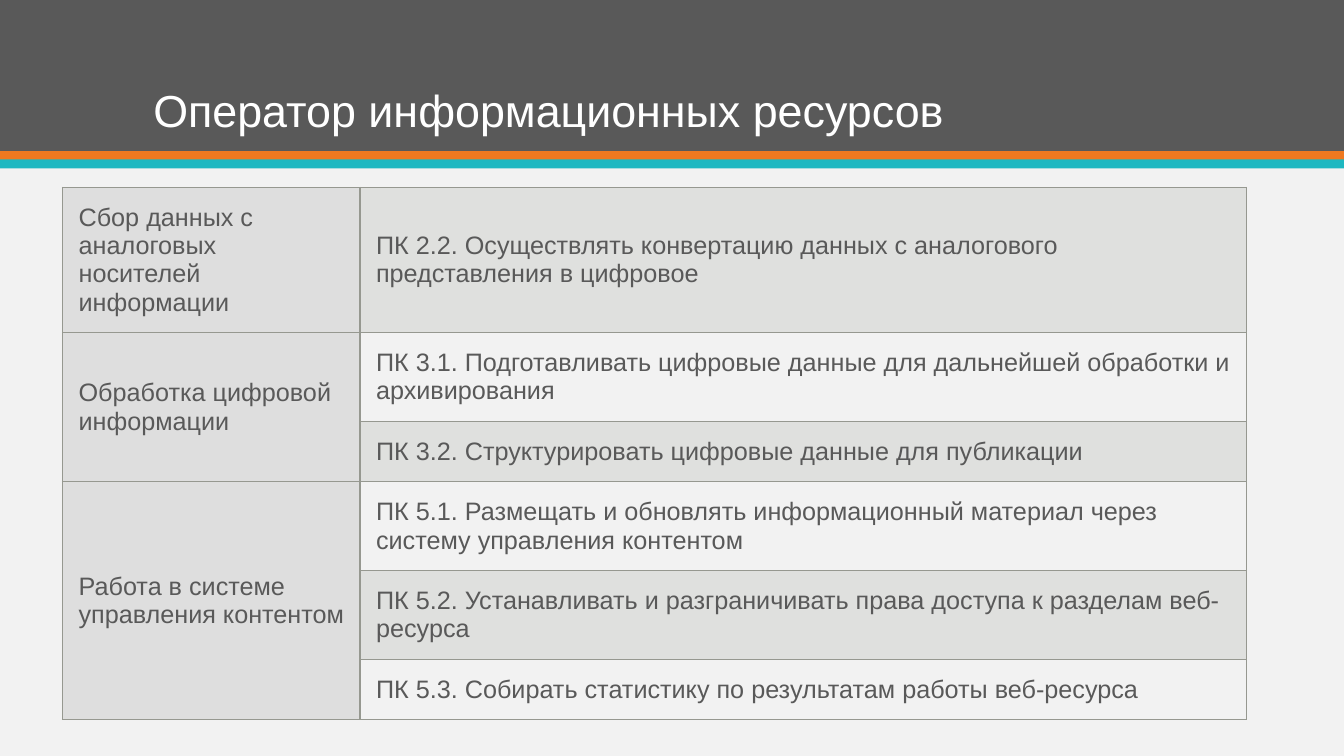
import pptx
import pptx.dml.color
import pptx.enum.shapes
import pptx.enum.text
import pptx.oxml
import pptx.oxml.ns
import pptx.util
import lxml.etree

Inches = pptx.util.Inches
ANCHOR = pptx.enum.text.MSO_ANCHOR
GREY = "595959"
RULE = "969890"
BANDS = [(0, 1.5, GREY), (1.5, 0.09, "EF7920"), (1.58, 0.09, "1EB8C1")]
ROW_HEIGHTS = [1.43, 0.88, 0.59, 0.88, 0.88, 0.59]
COLUMN_WIDTHS = [2.95, 8.79]
ACTIVITIES = [
    ("Сбор данных с аналоговых носителей информации", [
        "ПК 2.2. Осуществлять конвертацию данных с аналогового представления в цифровое",
    ]),
    ("Обработка цифровой информации", [
        "ПК 3.1. Подготавливать цифровые данные для дальнейшей обработки и архивирования",
        "ПК 3.2. Структурировать цифровые данные для публикации",
    ]),
    ("Работа в системе управления контентом", [
        "ПК 5.1. Размещать и обновлять информационный материал через систему управления контентом",
        "ПК 5.2. Устанавливать и разграничивать права доступа к разделам веб-ресурса",
        "ПК 5.3. Собирать статистику по результатам работы веб-ресурса",
    ]),
]


def colour(code):
    return pptx.dml.color.RGBColor.from_string(code)


def apply_format(target, values):
    for name, value in values.items():
        setattr(target, name, value)


def paint(fill, code):
    fill.solid()
    fill.fore_color.rgb = colour(code)


def write(frame, text, size, code):
    para = frame.paragraphs[0]
    para.alignment = pptx.enum.text.PP_ALIGN.LEFT
    span = para.add_run()
    span.text = text
    apply_format(span.font, {"name": "Arial", "size": pptx.util.Pt(size)})
    span.font.color.rgb = colour(code)
    return para


def add_header(page, left, top, width):
    for offset, height, code in BANDS:
        band = page.shapes.add_shape(
            pptx.enum.shapes.MSO_SHAPE.RECTANGLE,
            Inches(left), Inches(top + offset), Inches(width), Inches(height))
        band.shadow.inherit = False
        paint(band.fill, code)
        band.line.fill.background()
    title = page.shapes.title
    apply_format(title, {
        "left": Inches(left + 1.42), "top": Inches(top + 0.28),
        "width": Inches(10.5), "height": Inches(1.13)})
    apply_format(title.text_frame, {
        "word_wrap": True, "vertical_anchor": ANCHOR.BOTTOM,
        "auto_size": pptx.enum.text.MSO_AUTO_SIZE.NONE})
    para = write(title.text_frame, "Оператор информационных ресурсов", 32, "FFFFFF")
    para.line_spacing = 0.9
    page.shapes._spTree.append(title._element)


def style_cell(cell, code, alpha):
    apply_format(cell, {
        "vertical_anchor": ANCHOR.MIDDLE,
        "margin_left": Inches(0.16), "margin_right": Inches(0.15),
        "margin_top": Inches(0.16), "margin_bottom": Inches(0.16)})
    if code:
        paint(cell.fill, code)
    else:
        cell.fill.background()
    properties = cell._tc.get_or_add_tcPr()
    if alpha:
        tint = properties.find(".//" + pptx.oxml.ns.qn("a:srgbClr"))
        lxml.etree.SubElement(tint, pptx.oxml.ns.qn("a:alpha"), val=str(alpha * 1000))
    for index, side in enumerate(["lnL", "lnR", "lnT", "lnB"]):
        properties.insert(index, pptx.oxml.parse_xml(
            f'<a:{side} {pptx.oxml.ns.nsdecls("a")} w="12700"><a:solidFill>'
            f'<a:srgbClr val="{RULE}"/></a:solidFill></a:{side}>'))


def add_competences(page, left, top):
    table = page.shapes.add_table(
        len(ROW_HEIGHTS), len(COLUMN_WIDTHS), Inches(left), Inches(top),
        Inches(sum(COLUMN_WIDTHS)), Inches(sum(ROW_HEIGHTS))).table
    apply_format(table, {"first_row": False, "horz_banding": False})
    for column, width in zip(table.columns, COLUMN_WIDTHS):
        column.width = Inches(width)
    for row, height in zip(table.rows, ROW_HEIGHTS):
        row.height = Inches(height)
    first = 0
    for activity, competences in ACTIVITIES:
        for index, competence in enumerate(competences, first):
            shaded = index % 2 == 0
            style_cell(table.cell(index, 0), "DEDEDE", None)
            style_cell(table.cell(index, 1), RULE if shaded else None, 20 if shaded else None)
            write(table.cell(index, 1).text_frame, competence, 18, GREY)
        heading = table.cell(first, 0)
        if len(competences) > 1:
            heading.merge(table.cell(first + len(competences) - 1, 0))
        write(heading.text_frame, activity, 18, GREY)
        first += len(competences)


def main():
    deck = pptx.Presentation()
    apply_format(deck, {"slide_width": Inches(13.33), "slide_height": Inches(7.5)})
    page = deck.slides.add_slide(deck.slide_layouts.get_by_name("Title Only"))
    paint(page.background.fill, "F2F2F2")
    add_header(page, 0, 0, 13.33)
    add_competences(page, 0.62, 1.86)
    deck.save("out.pptx")


if __name__ == "__main__":
    main()
